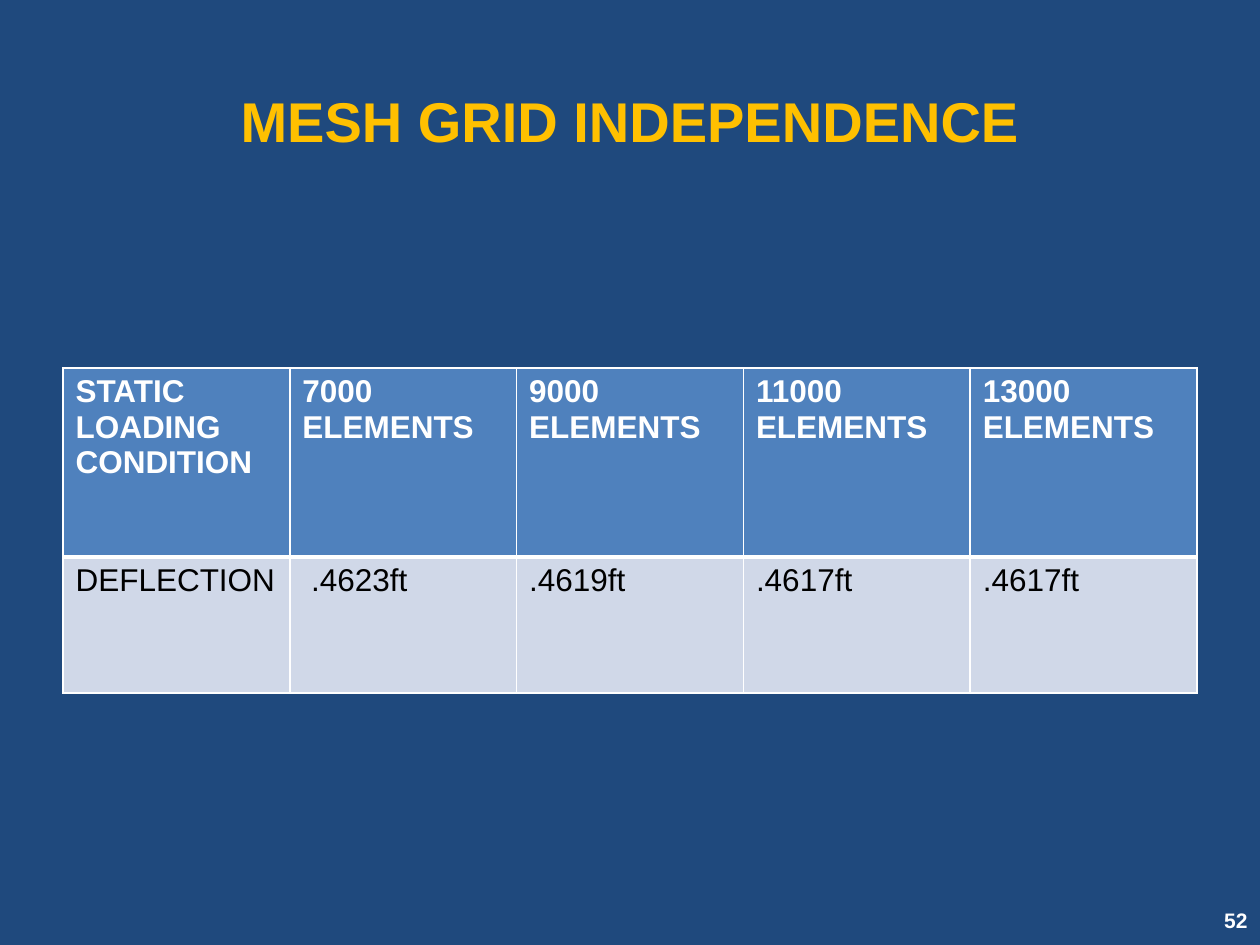
from dataclasses import dataclass

import pptx
import pptx.dml.color
import pptx.enum.text
import pptx.oxml
import pptx.oxml.ns
import pptx.util
from pptx.util import Inches

COLORS = {
    "background": "1F497D",
    "title": "FFC000",
    "header": "4F81BD",
    "body": "D0D8E8",
    "white": "FFFFFF",
    "black": "000000",
}
FONT = "Arial"
ALIGN = pptx.enum.text.PP_ALIGN
ANCHOR = pptx.enum.text.MSO_ANCHOR


@dataclass
class TextBox:
    text: str
    left: float
    top: float
    width: float
    height: float
    size: float
    color: str
    align: ALIGN


@dataclass
class TableRow:
    texts: list[str]
    height: float
    fill: str
    color: str
    bold: bool
    bottom_line: float


BOXES = [
    TextBox("MESH GRID INDEPENDENCE", 0.5, 0.33, 9, 1.25, 32, "title", ALIGN.CENTER),
    TextBox("52", 9.33, 7.1, 0.67, 0.4, 12, "white", ALIGN.RIGHT),
]

ELEMENT_COUNTS = [7000, 9000, 11000, 13000]
ROWS = [
    TableRow(["STATIC LOADING CONDITION"] + [f"{n} ELEMENTS" for n in ELEMENT_COUNTS],
             1.5, "header", "white", True, 3),
    TableRow(["DEFLECTION", " .4623ft", ".4619ft", ".4617ft", ".4617ft"],
             1.08, "body", "black", False, 1),
]


def rgb(name: str) -> pptx.dml.color.RGBColor:
    return pptx.dml.color.RGBColor.from_string(COLORS[name])


def write_text(tf, text: str, *, size: float, color: str, bold: bool = True,
               align: ALIGN = ALIGN.LEFT) -> None:
    tf.word_wrap = True
    p = tf.paragraphs[0]
    p.alignment = align
    r = p.add_run()
    r.text = text
    r.font.name = FONT
    r.font.size = pptx.util.Pt(size)
    r.font.bold = bold
    r.font.color.rgb = rgb(color)


def add_text_box(s, box: TextBox) -> None:
    sp = s.shapes.add_textbox(Inches(box.left), Inches(box.top),
                              Inches(box.width), Inches(box.height))
    sp.text_frame.vertical_anchor = ANCHOR.MIDDLE
    write_text(sp.text_frame, box.text, size=box.size, color=box.color, align=box.align)


def set_border(cell, side: str, width: float) -> None:
    line = pptx.oxml.parse_xml(
        f'<a:ln{side} {pptx.oxml.ns.nsdecls("a")} w="{pptx.util.Pt(width)}">'
        f'<a:solidFill><a:srgbClr val="{COLORS["white"]}"/></a:solidFill></a:ln{side}>')
    cell._tc.get_or_add_tcPr().append(line)


def add_table(s, rows: list[TableRow], left: float, top: float, col_width: float) -> None:
    n_cols = len(rows[0].texts)
    table = s.shapes.add_table(
        len(rows), n_cols, Inches(left), Inches(top),
        Inches(n_cols * col_width), Inches(sum(row.height for row in rows))).table
    for col in table.columns:
        col.width = Inches(col_width)
    top_line = 1
    for i, row in enumerate(rows):
        table.rows[i].height = Inches(row.height)
        for j, text in enumerate(row.texts):
            cell = table.cell(i, j)
            # Borders come before the fill in the cell properties
            for side, width in zip("LRTB", (1, 1, top_line, row.bottom_line)):
                set_border(cell, side, width)
            cell.fill.solid()
            cell.fill.fore_color.rgb = rgb(row.fill)
            write_text(cell.text_frame, text, size=18, color=row.color, bold=row.bold)
        top_line = row.bottom_line


def main() -> None:
    prs = pptx.Presentation()
    prs.slide_width, prs.slide_height = Inches(10), Inches(7.5)
    s = prs.slides.add_slide(prs.slide_layouts[6])
    s.background.fill.solid()
    s.background.fill.fore_color.rgb = rgb("background")

    # Title and slide number
    for box in BOXES:
        add_text_box(s, box)

    # Deflection by mesh size
    add_table(s, ROWS, left=0.5, top=2.92, col_width=1.8)

    prs.save("out.pptx")


if __name__ == "__main__":
    main()
